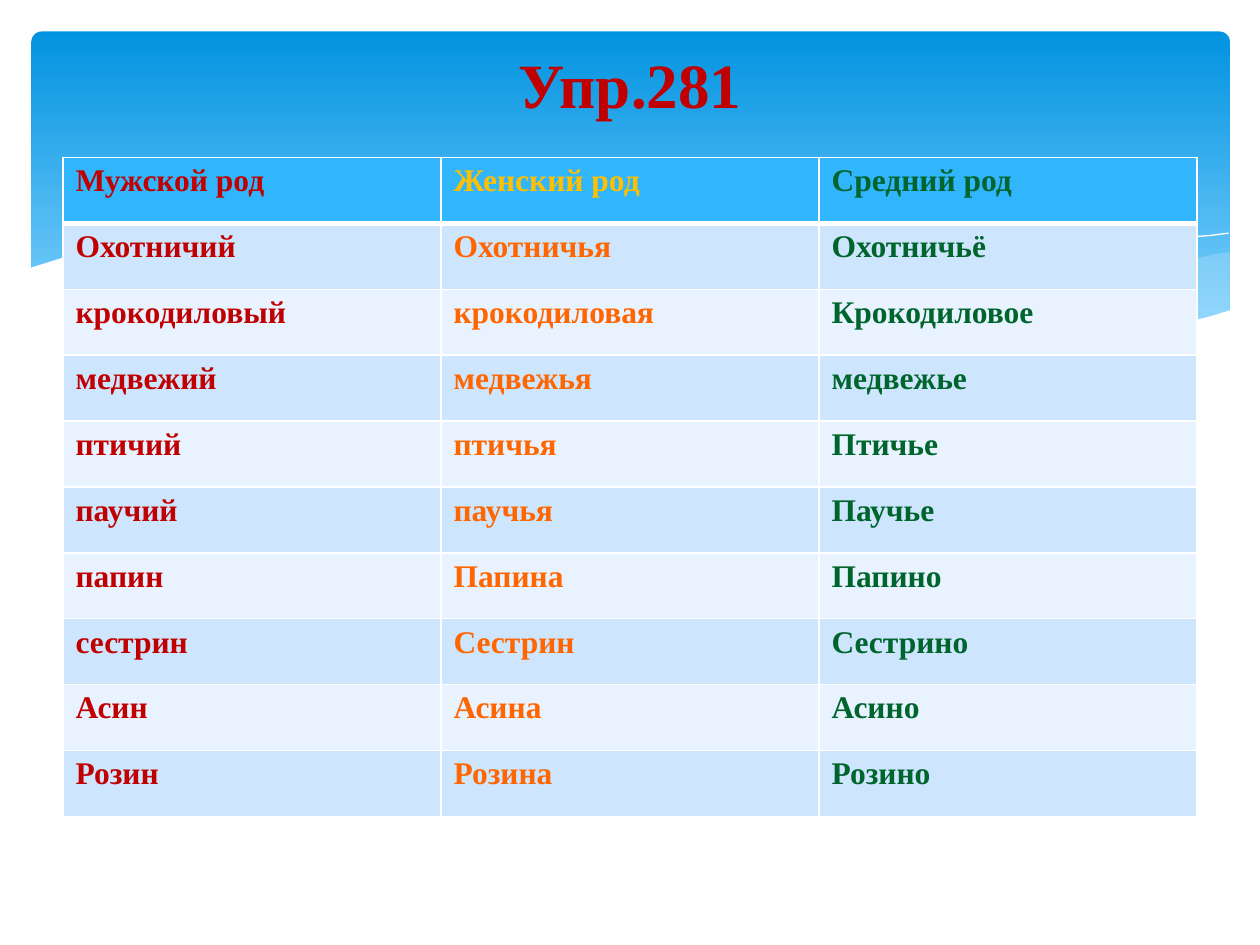
"""Build a slide with a table of possessive adjectives by grammatical gender."""
import pptx
import pptx.dml.color
import pptx.enum.shapes
import pptx.enum.text
import pptx.oxml
import pptx.oxml.ns
import pptx.util
from pptx.util import Inches

RGBColor = pptx.dml.color.RGBColor
WHITE = RGBColor(0xFF, 0xFF, 0xFF)
SKY_TOP = RGBColor(0x02, 0x93, 0xE0)
SKY_BOTTOM = RGBColor(0x83, 0xD3, 0xFE)
PALE_BLUE = RGBColor(0xC6, 0xE7, 0xFC)
HEADER_FILL = RGBColor(0x31, 0xB6, 0xFD)
BAND_FILLS = [RGBColor(0xE8, 0xF3, 0xFF), RGBColor(0xCE, 0xE5, 0xFE)]
RED = RGBColor(0xC0, 0x00, 0x00)
YELLOW = RGBColor(0xFF, 0xC0, 0x00)
ORANGE = RGBColor(0xFF, 0x66, 0x00)
GREEN = RGBColor(0x00, 0x64, 0x2D)
HEADER_COLORS = [RED, YELLOW, GREEN]
BODY_COLORS = [RED, ORANGE, GREEN]

TITLE_BOX = {"left": 0.5, "top": 0.3, "width": 9, "height": 0.72}
FONT_FORMAT = {"name": "Times New Roman", "bold": True}
TITLE_SIZE = pptx.util.Pt(36)
TABLE_SIZE = pptx.util.Pt(18)
THIN_BORDER = pptx.util.Pt(1)
THICK_BORDER = pptx.util.Pt(3)
UNITS_PER_INCH = 100
STEPS_PER_SEGMENT = 6

WORDS = [
    ("Мужской род", "Женский род", "Средний род"),
    ("Охотничий", "Охотничья", "Охотничьё"),
    ("крокодиловый", "крокодиловая", "Крокодиловое"),
    ("медвежий", "медвежья", "медвежье"),
    ("птичий", "птичья", "Птичье"),
    ("паучий", "паучья", "Паучье"),
    ("папин", "Папина", "Папино"),
    ("сестрин", "Сестрин", "Сестрино"),
    ("Асин", "Асина", "Асино"),
    ("Розин", "Розина", "Розино"),
]

RIGHT_WAVE = [
    {"start": 9.76, "end": 6.61, "heights": [2, 2.15, 2.33, 2.5, 2.65]},
    {"start": 6.61, "end": 9.76, "heights": [2.65, 2.74, 2.78, 2.7, 2.47]},
]
MIDDLE_WAVE = [
    {"start": 8.93, "end": 2.86, "heights": [2.73, 2.54, 2.27, 2, 1.86, 1.91]},
    {"start": 2.86, "end": 8.93, "heights": [1.91, 2.12, 2.4, 2.64, 2.77, 2.73]},
]
LONG_CREST = [
    {"start": 3.09, "end": 9.07, "heights": [1.95, 1.87, 1.96, 2.13, 2.39, 2.72]},
]
RIGHT_CREST = [
    {"start": 6.13, "end": 9.75, "heights": [2.57, 2.33, 2.12, 1.95, 1.85]},
]
WHITE_WAVE = [
    {"start": 9.77, "end": 0.23,
     "heights": [2.46, 2.72, 2.77, 2.68, 2.53, 2.33, 2.1, 1.92, 1.84, 1.87, 2.13]},
    {"start": 0.23, "end": 9.77, "heights": [3.29, 3.29]},
]
WAVES = [
    {"edges": RIGHT_WAVE, "fill": PALE_BLUE, "opacity": 29},
    {"edges": MIDDLE_WAVE, "fill": PALE_BLUE, "opacity": 40},
    {"edges": LONG_CREST, "fill": None, "opacity": 100},
    {"edges": RIGHT_CREST, "fill": None, "opacity": 100},
    {"edges": WHITE_WAVE, "fill": WHITE, "opacity": 100},
]


def smooth_edge(start, end, heights):
    """Run a Catmull-Rom spline through heights spaced evenly from start to end."""
    segments = len(heights) - 1
    knots = [2 * heights[0] - heights[1], *heights, 2 * heights[-1] - heights[-2]]
    points = []
    for step in range(segments * STEPS_PER_SEGMENT + 1):
        position = step / STEPS_PER_SEGMENT
        segment = min(int(position), segments - 1)
        t = position - segment
        before, first, second, after = knots[segment:segment + 4]
        height = first + 0.5 * (
            (second - before) * t
            + (2 * before - 5 * first + 4 * second - after) * t ** 2
            + (3 * first - before - 3 * second + after) * t ** 3
        )
        across = start + (end - start) * position / segments
        points.append((across * UNITS_PER_INCH, height * UNITS_PER_INCH))
    return points


def add_wave(shapes, edges, fill, opacity):
    """Join the edges into a filled wave, or a thin white crest without a fill."""
    points = [point for edge in edges for point in smooth_edge(**edge)]
    builder = shapes.build_freeform(*points[0], scale=Inches(1 / UNITS_PER_INCH))
    builder.add_line_segments(points[1:], close=fill is not None)
    wave = builder.convert_to_shape()
    wave.shadow.inherit = False
    if fill is None:
        wave.fill.background()
        wave.line.color.rgb = WHITE
        wave.line.width = pptx.util.Pt(0)
        return
    wave.fill.solid()
    wave.fill.fore_color.rgb = fill
    wave.line.fill.background()
    if opacity < 100:
        color = wave.element.spPr.find(".//" + pptx.oxml.ns.qn("a:srgbClr"))
        alpha = color.makeelement(pptx.oxml.ns.qn("a:alpha"), {"val": str(opacity * 1000)})
        color.append(alpha)


presentation = pptx.Presentation()
presentation.slide_width = Inches(10)
presentation.slide_height = Inches(7.5)
slide = presentation.slides.add_slide(presentation.slide_layouts[5])
shapes = slide.shapes

sky = shapes.add_shape(
    pptx.enum.shapes.MSO_SHAPE.ROUNDED_RECTANGLE,
    Inches(0.25), Inches(0.25), Inches(9.51), Inches(2.7),
)
sky.adjustments[0] = 0.03
sky.shadow.inherit = False
sky.line.fill.background()
sky.fill.gradient()
sky.fill.gradient_angle = 270
for stop, color, position in zip(sky.fill.gradient_stops, (SKY_TOP, SKY_BOTTOM), (0, 0.9)):
    stop.color.rgb = color
    stop.position = position

wave_group = shapes.add_group_shape()
for wave_format in WAVES:
    add_wave(wave_group.shapes, **wave_format)

styled_texts = []
table = shapes.add_table(
    len(WORDS), len(WORDS[0]), Inches(0.5), Inches(1.25), Inches(9), Inches(5.23)
).table
for row_index, words in enumerate(WORDS):
    is_header = row_index == 0
    text_colors = HEADER_COLORS if is_header else BODY_COLORS
    row_fill = HEADER_FILL if is_header else BAND_FILLS[row_index % 2]
    borders = {
        "lnL": THIN_BORDER,
        "lnR": THIN_BORDER,
        "lnT": THICK_BORDER if row_index == 1 else THIN_BORDER,
        "lnB": THICK_BORDER if is_header else THIN_BORDER,
    }
    for cell, word, text_color in zip(table.rows[row_index].cells, words, text_colors):
        cell.text = word
        styled_texts.append((cell.text_frame, TABLE_SIZE, text_color))
        cell_properties = cell._tc.get_or_add_tcPr()
        for tag, width in borders.items():
            cell_properties.append(pptx.oxml.parse_xml(
                f'<a:{tag} {pptx.oxml.ns.nsdecls("a")} w="{width}">'
                f'<a:solidFill><a:srgbClr val="{WHITE}"/></a:solidFill></a:{tag}>'
            ))
        cell.fill.solid()
        cell.fill.fore_color.rgb = row_fill

title = shapes.title
for side, length in TITLE_BOX.items():
    setattr(title, side, Inches(length))
title.text_frame.text = "Упр.281"
title.text_frame.vertical_anchor = pptx.enum.text.MSO_ANCHOR.MIDDLE
title.text_frame.paragraphs[0].alignment = pptx.enum.text.PP_ALIGN.CENTER
title.element.getparent().append(title.element)
styled_texts.append((title.text_frame, TITLE_SIZE, RED))

for text_frame, size, color in styled_texts:
    font = text_frame.paragraphs[0].runs[0].font
    for attribute, value in {**FONT_FORMAT, "size": size}.items():
        setattr(font, attribute, value)
    font.color.rgb = color

presentation.save("out.pptx")
